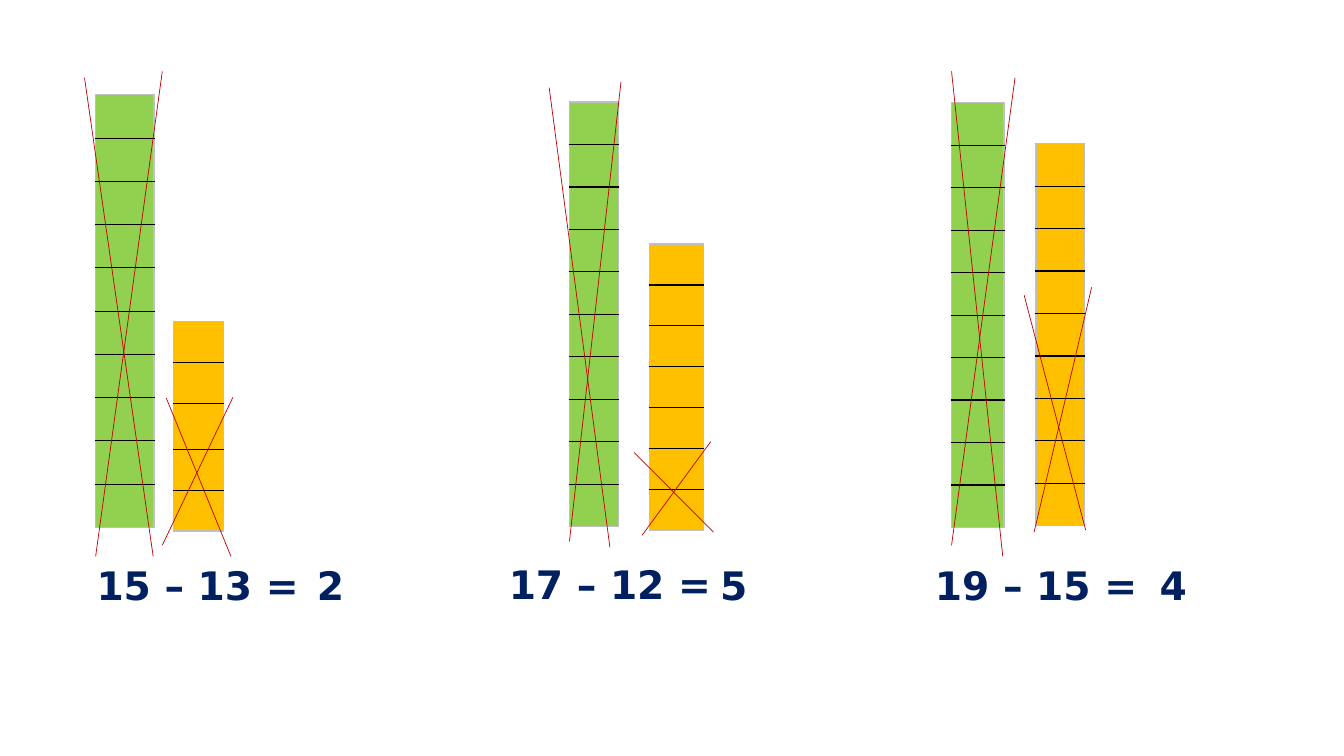
from dataclasses import dataclass

from lxml.etree import SubElement
from pptx import Presentation
from pptx.dml.color import RGBColor as RGB
from pptx.enum.shapes import MSO_CONNECTOR as CONN
from pptx.enum.text import MSO_AUTO_SIZE as FIT, PP_ALIGN as ALIGN
from pptx.oxml.ns import qn
from pptx.util import Cm, Pt


@dataclass(frozen=True)
class Theme:
    ten: str = "92D050"
    ones: str = "FFC000"
    divider: str = "000000"
    rim: str = "BFBFBF"
    cross: str = "C00000"
    ink: str = "002060"
    font: str = "DejaVu Sans"
    size: int = 28
    border: float = 1
    stroke: float = 0.5


class Board:
    def __init__(self, slide, theme):
        self.slide = slide
        self.theme = theme

    def border(self, cell, side, color):
        tc_pr = cell._tc.get_or_add_tcPr()
        ln = SubElement(tc_pr, qn(f"a:ln{side}"), w=str(Pt(self.theme.border)))
        fill = SubElement(ln, qn("a:solidFill"))
        SubElement(fill, qn("a:srgbClr"), val=color)

    def column(self, left, top, width, heights, color):
        t = self.theme
        last = len(heights) - 1
        table = self.slide.shapes.add_table(
            len(heights), 1, Cm(left), Cm(top), Cm(width), Cm(sum(heights))).table
        table.first_row = table.horz_banding = False
        for i, height in enumerate(heights):
            table.rows[i].height = Cm(height)
            cell = table.cell(i, 0)
            for side in ("left", "right", "top", "bottom"):
                setattr(cell, f"margin_{side}", 0)
            edges = {"L": t.rim, "R": t.rim,
                     "T": t.divider if i else t.rim,
                     "B": t.divider if i < last else t.rim}
            for side, edge in edges.items():
                self.border(cell, side, edge)
            cell.fill.solid()
            cell.fill.fore_color.rgb = RGB.from_string(color)

    def text(self, left, top, width, words):
        t = self.theme
        tf = self.slide.shapes.add_textbox(
            Cm(left), Cm(top), Cm(width), Cm(1.45)).text_frame
        tf.word_wrap = False
        tf.auto_size = FIT.SHAPE_TO_FIT_TEXT
        p = tf.paragraphs[0]
        p.alignment = ALIGN.CENTER
        r = p.add_run()
        r.text = words
        for name, value in {"name": t.font, "size": Pt(t.size), "bold": True}.items():
            setattr(r.font, name, value)
        r.font.color.rgb = RGB.from_string(t.ink)

    def line(self, x1, y1, x2, y2):
        s = self.slide.shapes.add_connector(
            CONN.STRAIGHT, Cm(x1), Cm(y1), Cm(x2), Cm(y2))
        s.line.width = Pt(self.theme.stroke)
        s.line.color.rgb = RGB.from_string(self.theme.cross)
        SubElement(s._element.spPr, qn("a:effectLst"))


PROBLEMS = [
    {"ten": (2.41, 2.39, 1.47, [1.09] * 10),
     "ones": (4.38, 8.1, 1.25, [1.03, 1.03, 1.16, 1.03, 1.03]),
     "texts": [(2.01, 14.02, 5.94, "15 – 13 ="), (7.72, 14.02, 1.22, "2")],
     "crosses": [(4.09, 1.8, 2.41, 14.02), (2.13, 1.96, 3.86, 14.02),
                 (4.19, 10.03, 5.82, 14.02), (4.09, 13.74, 5.87, 10.01)]},
    {"ten": (14.35, 2.57, 1.24, [1.07] * 10),
     "ones": (16.37, 6.15, 1.35, [1.03] * 7),
     "texts": [(12.4, 14, 5.94, "17 – 12 ="), (17.88, 14.02, 1.22, "5")],
     "crosses": [(13.84, 2.21, 15.37, 13.79), (15.65, 2.06, 14.35, 13.64),
                 (15.98, 11.4, 17.98, 13.41), (17.91, 11.13, 16.18, 13.49)]},
    {"ten": (23.98, 2.59, 1.32, [1.07] * 10),
     "ones": (26.11, 3.62, 1.22, [1.07] * 9),
     "texts": [(23.14, 14.02, 5.94, "19 – 15 ="), (28.96, 14.02, 1.22, "4")],
     "crosses": [(23.98, 1.8, 25.27, 14.02), (25.58, 1.96, 23.98, 13.74),
                 (25.81, 7.44, 27.36, 13.36), (27.51, 7.24, 26.06, 13.41)]},
]


def main():
    prs = Presentation()
    prs.slide_width, prs.slide_height = Cm(33.87), Cm(19.05)
    theme = Theme()
    board = Board(prs.slides.add_slide(prs.slide_layouts[6]), theme)
    for problem in PROBLEMS:
        board.column(*problem["ten"], theme.ten)
        board.column(*problem["ones"], theme.ones)
        for text in problem["texts"]:
            board.text(*text)
        for cross in problem["crosses"]:
            board.line(*cross)
    prs.save("out.pptx")


if __name__ == "__main__":
    main()
